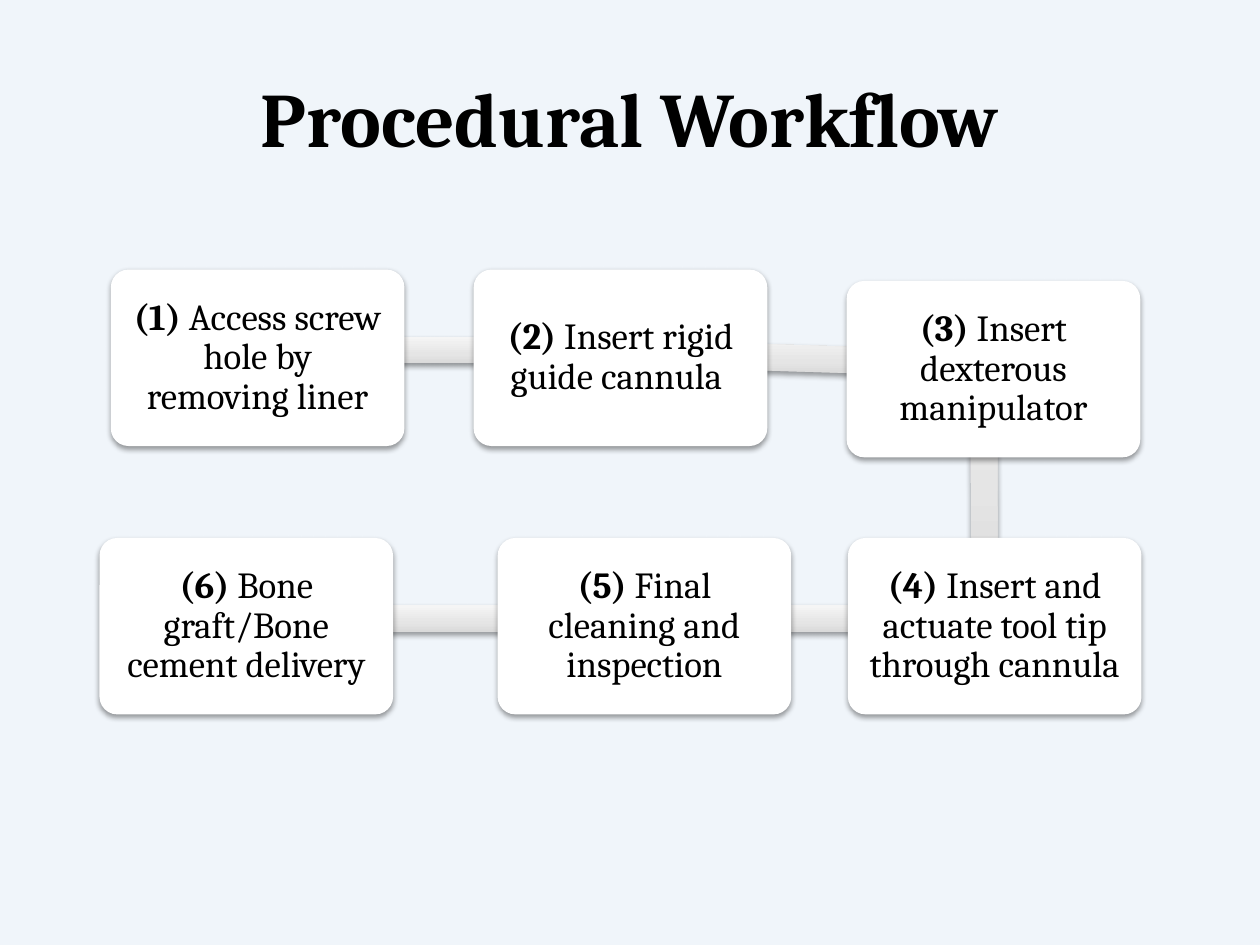
import math
from lxml import etree
from pptx import Presentation
from pptx.dml.color import RGBColor
from pptx.enum import shapes, text
from pptx.oxml import parse_xml
from pptx.util import Inches, Pt

WIDTH, HEIGHT = 10, 7.5
FONT = "Cambria"
COLORS = {"background": "F0F5FA", "card": "FFFFFF", "ink": "000000",
          "bar_dark": "DADADA", "bar_mid": "E5E5E5", "bar_light": "F5F5F5"}
DRAWING = "http://schemas.openxmlformats.org/drawingml/2006/main"

# Regions as left, top, width, height in shares of the slide
TITLE_BOX = (0.05, 0.04, 0.9, 1.25 / HEIGHT)
FLOW_BOX = (0.079, 2.14 / HEIGHT, 0.827, 3.53 / HEIGHT)

# Steps in reading order: left and top within the flow region, wording
CARD_SIZE = (2.33, 1.4)
STEPS = [
    (0.09, 0, "Access screw hole by removing liner"),
    (2.97, 0, "Insert rigid guide cannula "),
    (5.93, 0.09, "Insert dexterous manipulator"),
    (5.94, 2.13, "Insert and actuate tool tip through cannula"),
    (3.16, 2.13, "Final cleaning and inspection"),
    (0, 2.13, "Bone graft/Bone cement delivery"),
]
BAR_THICKNESS = 0.21


def color(name):
    return RGBColor.from_string(COLORS[name])


def to_inches(region):
    left, top, width, height = region
    return left * WIDTH, top * HEIGHT, width * WIDTH, height * HEIGHT


def add_shadow(shape):
    """Soft shadow that falls straight down."""
    shape._element.spPr.append(parse_xml(
        f'<a:effectLst xmlns:a="{DRAWING}">'
        '<a:outerShdw blurRad="40000" dist="20000" dir="5400000" rotWithShape="0">'
        f'<a:srgbClr val="{COLORS["ink"]}"><a:alpha val="38000"/></a:srgbClr>'
        '</a:outerShdw></a:effectLst>'))


def fill_gradient(shape):
    """Dark at the bottom, light at the top, whatever the rotation."""
    shape.fill.gradient()
    gradient = shape._element.spPr.find(f"{{{DRAWING}}}gradFill")
    gradient.set("rotWithShape", "0")
    for child in list(gradient):
        gradient.remove(child)
    stops = etree.SubElement(gradient, f"{{{DRAWING}}}gsLst")
    for position, name in ((0, "bar_dark"), (35, "bar_mid"), (100, "bar_light")):
        stop = etree.SubElement(stops, f"{{{DRAWING}}}gs", pos=str(position * 1000))
        etree.SubElement(stop, f"{{{DRAWING}}}srgbClr", val=COLORS[name])
    etree.SubElement(gradient, f"{{{DRAWING}}}lin", ang="16200000", scaled="0")


def style_paragraph(para, size):
    para.alignment = text.PP_ALIGN.CENTER
    para.font.name = FONT
    para.font.size = Pt(size)
    para.font.color.rgb = color("ink")


def add_title(page, region, wording):
    box = page.shapes.add_textbox(*map(Inches, to_inches(region)))
    box.text_frame.word_wrap = True
    box.text_frame.vertical_anchor = text.MSO_ANCHOR.MIDDLE
    para = box.text_frame.paragraphs[0]
    para.text = wording
    style_paragraph(para, 44)
    para.font.bold = True


def add_bar(page, start, end):
    """Bar as long as the gap between two card centres, set back from their middle."""
    across, down = end[0] - start[0], end[1] - start[1]
    length = math.hypot(across, down)
    back_x, back_y = (0.7, 0.06) if abs(across) > abs(down) else (0.08, 0.36)
    left = (start[0] + end[0] - length) / 2 - back_x
    top = (start[1] + end[1] - BAR_THICKNESS) / 2 - back_y
    bar = page.shapes.add_shape(shapes.MSO_SHAPE.RECTANGLE,
                                *map(Inches, (left, top, length, BAR_THICKNESS)))
    bar.rotation = math.degrees(math.atan2(down, across))
    fill_gradient(bar)
    bar.line.fill.background()
    add_shadow(bar)


def add_card(page, left, top, number, wording):
    card = page.shapes.add_shape(shapes.MSO_SHAPE.ROUNDED_RECTANGLE,
                                 *map(Inches, (left, top, *CARD_SIZE)))
    card.adjustments[0] = 0.1
    card.fill.solid()
    card.fill.fore_color.rgb = color("card")
    card.line.fill.background()
    add_shadow(card)

    frame = card.text_frame
    frame.word_wrap = True
    frame.vertical_anchor = text.MSO_ANCHOR.MIDDLE
    frame.margin_left = frame.margin_right = Inches(0.12)
    frame.margin_top = frame.margin_bottom = Inches(0.12)
    para = frame.paragraphs[0]
    style_paragraph(para, 21)
    para.line_spacing = 0.9
    label = para.add_run()
    label.text = f"({number}) "
    label.font.bold = True
    para.add_run().text = wording


def add_workflow(page, region, steps):
    left, top, _, _ = to_inches(region)
    centres = [(left + x + CARD_SIZE[0] / 2, top + y + CARD_SIZE[1] / 2)
               for x, y, _ in steps]
    # Bars lie behind the cards
    for start, end in zip(centres, centres[1:]):
        add_bar(page, start, end)
    for number, (x, y, wording) in enumerate(steps, 1):
        add_card(page, left + x, top + y, number, wording)


def main():
    deck = Presentation()
    deck.slide_width, deck.slide_height = Inches(WIDTH), Inches(HEIGHT)
    page = deck.slides.add_slide(deck.slide_layouts[6])
    page.background.fill.solid()
    page.background.fill.fore_color.rgb = color("background")
    add_title(page, TITLE_BOX, "Procedural Workflow")
    add_workflow(page, FLOW_BOX, STEPS)
    deck.save("out.pptx")


if __name__ == "__main__":
    main()
